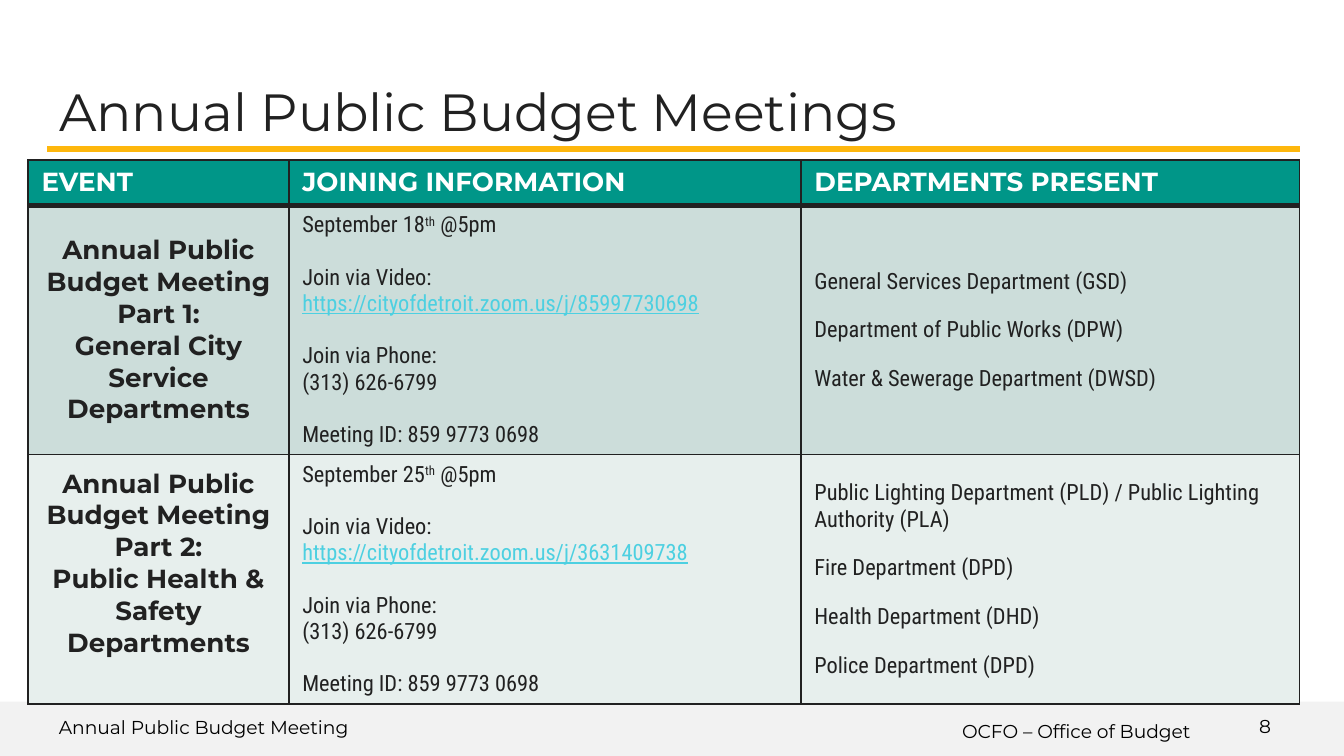
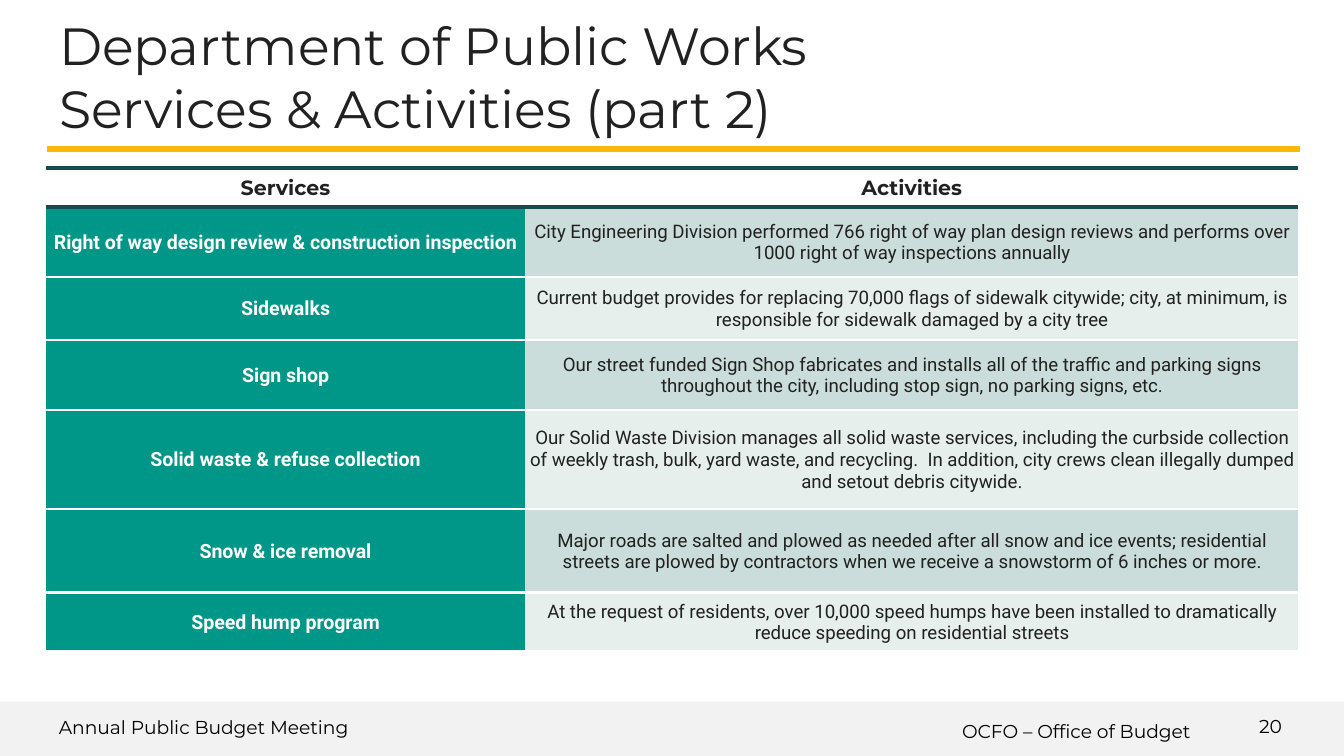
from copy import deepcopy
from dataclasses import dataclass

from lxml import etree
from pptx import Presentation
from pptx.dml.color import RGBColor
from pptx.enum.shapes import MSO_CONNECTOR, MSO_SHAPE
from pptx.enum.text import MSO_ANCHOR, MSO_AUTO_SIZE, PP_ALIGN
from pptx.oxml.ns import qn
from pptx.util import Inches, Pt

LEFT, CENTER = PP_ALIGN.LEFT, PP_ALIGN.CENTER
TOP, MIDDLE = MSO_ANCHOR.TOP, MSO_ANCHOR.MIDDLE
NO_FIT = MSO_AUTO_SIZE.NONE
STRAIGHT, RECTANGLE = MSO_CONNECTOR.STRAIGHT, MSO_SHAPE.RECTANGLE

# The page is a grid of 100 columns and 56.25 rows of square cells.
COLUMNS, ROWS, CELL = 100, 56.25, 0.1
TITLE_ONLY = 5

INK, BLACK, WHITE = "212121", "000000", "FFFFFF"
TEAL, DARK_TEAL, GOLD, BAND = "009688", "154C4D", "FEB70D", "F2F2F2"
LINK = "4DD0E1"
SAGE, SERVICE_SAGE, PALE = "CCDDDA", "CBDDDA", "E7EFED"
BLANK_LINE = 14


@dataclass(frozen=True)
class Style:
    size: float
    font: str = "Montserrat"
    color: str = INK
    bold: bool = False


@dataclass(frozen=True)
class Span:
    text: str
    raised: bool = False
    link: bool = False


@dataclass(frozen=True)
class Para:
    spans: tuple[Span, ...]
    before: float = 0
    after: float = 0


@dataclass(frozen=True)
class Place:
    left: float
    top: float
    width: float
    height: float


@dataclass(frozen=True)
class Edge:
    color: str
    width: float


@dataclass(frozen=True)
class CellLook:
    style: Style
    fill: str | None
    align: PP_ALIGN = LEFT
    anchor: MSO_ANCHOR = MIDDLE
    margins: tuple[float, ...] = (1, 0.5, 1, 0.5)


@dataclass(frozen=True)
class Meeting:
    event: tuple[str, ...]
    day: str
    link: str
    meeting_id: str
    departments: tuple[str, ...]
    fill: str
    event_bottom: float = 0.5


TITLE = Style(28)
FOOTER = Style(10, color=BLACK)
HEADING = Style(14, color=WHITE, bold=True)
EVENT = Style(14, bold=True)
DETAIL = Style(12, "Roboto Condensed")
SERVICE_HEADING = Style(11, bold=True)
SERVICE = Style(10.5, "Roboto", WHITE, True)
ACTIVITY = Style(10, "Roboto")

MEETINGS = (
    Meeting(
        ("Annual Public Budget Meeting", "Part 1:", "General City Service Departments"),
        "September 18",
        "https://cityofdetroit.zoom.us/j/85997730698",
        "859 9773 0698",
        (
            "General Services Department (GSD)",
            "Department of Public Works (DPW)",
            "Water & Sewerage Department (DWSD)",
        ),
        SAGE,
    ),
    Meeting(
        ("Annual Public Budget Meeting Part 2:", "Public Health & Safety Departments"),
        "September 25",
        "https://cityofdetroit.zoom.us/j/3631409738",
        "859 9773 0698",
        (
            "Public Lighting Department (PLD) / Public Lighting Authority (PLA)",
            "Fire Department (DPD)",
            "Health Department (DHD)",
            "Police Department (DPD)",
        ),
        PALE,
        event_bottom=2.9,
    ),
)

SERVICES = (
    ("Right of way design review & construction inspection",
     "City Engineering Division performed 766 right of way plan design reviews "
     "and performs over 1000 right of way inspections annually"),
    ("Sidewalks",
     "Current budget provides for replacing 70,000 flags of sidewalk citywide; "
     "city, at minimum, is responsible for sidewalk damaged by a city tree"),
    ("Sign shop",
     "Our street funded Sign Shop fabricates and installs all of the traffic and "
     "parking signs throughout the city, including stop sign, no parking signs, etc."),
    ("Solid waste & refuse collection",
     "Our Solid Waste Division manages all solid waste services, including the "
     "curbside collection of weekly trash, bulk, yard waste, and recycling.  In "
     "addition, city crews clean illegally dumped and setout debris citywide."),
    ("Snow & ice removal",
     "Major roads are salted and plowed as needed after all snow and ice events; "
     "residential streets are plowed by contractors when we receive a snowstorm "
     "of 6 inches or more."),
    ("Speed hump program",
     "At the request of residents, over 10,000 speed humps have been installed to "
     "dramatically reduce speeding on residential streets"),
)


def grid(cells: float) -> int:
    """Length of a number of grid cells."""
    return Inches(cells * CELL)


def box_of(place: Place) -> tuple[int, ...]:
    return tuple(map(grid, (place.left, place.top, place.width, place.height)))


def rgb(color: str) -> RGBColor:
    return RGBColor.from_string(color)


def format_run(run, style: Style) -> None:
    run.font.size = Pt(style.size)
    run.font.name = style.font
    run.font.bold = style.bold
    run.font.color.rgb = rgb(style.color)


def plain(text: str, before: float = 0, after: float = 0, link: bool = False) -> Para:
    return Para((Span(text, link=link),), before, after)


def write(frame, paras: list[Para], style: Style, align: PP_ALIGN = LEFT) -> None:
    for index, para in enumerate(paras):
        paragraph = frame.add_paragraph() if index else frame.paragraphs[0]
        paragraph.alignment = align
        paragraph.space_before, paragraph.space_after = Pt(para.before), Pt(para.after)
        for span in para.spans:
            run = paragraph.add_run()
            run.text = span.text
            format_run(run, style)
            if span.raised:
                run.font._rPr.set("baseline", "30000")
            if span.link:
                run.font.color.rgb = rgb(LINK)
                run.font.underline = True


def set_frame(frame, anchor: MSO_ANCHOR) -> None:
    frame.word_wrap = True
    frame.auto_size = NO_FIT
    frame.vertical_anchor = anchor
    frame.margin_left = frame.margin_right = grid(1)
    frame.margin_top = frame.margin_bottom = grid(1)


def add_label(page, text: str, place: Place, anchor: MSO_ANCHOR = TOP) -> None:
    box = page.shapes.add_textbox(*box_of(place))
    set_frame(box.text_frame, anchor)
    write(box.text_frame, [plain(text)], FOOTER)


def set_title(page, text: str, place: Place) -> None:
    title = page.shapes.title
    title.left, title.top, title.width, title.height = box_of(place)
    frame = title.text_frame
    set_frame(frame, TOP)
    frame.text = text
    paragraph = frame.paragraphs[0]
    paragraph.alignment = LEFT
    for run in paragraph.runs:
        format_run(run, TITLE)
    for line_break in paragraph._p.findall(qn("a:br")):
        line_break.append(deepcopy(paragraph.runs[0].font._rPr))


def add_page(deck, title: str, title_place: Place, number: int):
    """Add a page with its footer band, gold rule and title."""
    page = deck.slides.add_slide(deck.slide_layouts[TITLE_ONLY])
    band = page.shapes.add_shape(RECTANGLE, *box_of(Place(0, 52.2, COLUMNS, ROWS - 52.2)))
    band.shadow.inherit = False
    band.fill.solid()
    band.fill.fore_color.rgb = rgb(BAND)
    band.line.fill.background()
    add_label(page, "OCFO – Office of Budget", Place(70.6, 52.6, 29.4, 3.6))
    add_label(page, "Annual Public Budget Meeting", Place(3.4, 52.3, 40, 2.7))
    rule = page.shapes.add_connector(STRAIGHT, *map(grid, (3.5, 11.1, 96.7, 11.1)))
    rule.line.color.rgb = rgb(GOLD)
    rule.line.width = Pt(3)
    etree.SubElement(rule._element.spPr, qn("a:effectLst"))
    set_title(page, title, title_place)
    add_label(page, str(number), Place(92.7, 51.9, 6, 4.3), MIDDLE)
    return page


def add_grid_table(page, left: float, top: float, widths: tuple, heights: tuple):
    place = Place(left, top, sum(widths), sum(heights))
    table = page.shapes.add_table(len(heights), len(widths), *box_of(place)).table
    table.horz_banding = False
    for column, width in zip(table.columns, widths):
        column.width = grid(width)
    for row, height in zip(table.rows, heights):
        row.height = grid(height)
    return table


def set_edges(cell, side: Edge | None, top: Edge, bottom: Edge) -> None:
    properties = cell._tc.get_or_add_tcPr()
    for tag, edge in (("lnL", side), ("lnR", side), ("lnT", top), ("lnB", bottom)):
        line = etree.SubElement(properties, qn(f"a:{tag}"))
        if edge is None:
            line.set("w", "0")
            etree.SubElement(line, qn("a:noFill"))
        else:
            line.set("w", str(int(Pt(edge.width))))
            fill = etree.SubElement(line, qn("a:solidFill"))
            etree.SubElement(fill, qn("a:srgbClr")).set("val", edge.color)


def fill_cell(cell, paras: list[Para], look: CellLook) -> None:
    if look.fill:
        cell.fill.solid()
        cell.fill.fore_color.rgb = rgb(look.fill)
    else:
        cell.fill.background()
    cell.vertical_anchor = look.anchor
    (cell.margin_left, cell.margin_top,
     cell.margin_right, cell.margin_bottom) = map(grid, look.margins)
    write(cell.text_frame, paras, look.style, look.align)


def joining_paras(meeting: Meeting) -> list[Para]:
    return [
        Para((Span(meeting.day), Span("th", raised=True), Span(" @5pm"))),
        plain("Join via Video:", BLANK_LINE),
        plain(meeting.link, link=True),
        plain("Join via Phone:", BLANK_LINE),
        plain("(313) 626-6799"),
        plain(f"Meeting ID: {meeting.meeting_id}", BLANK_LINE),
    ]


def add_meetings(page) -> None:
    table = add_grid_table(page, 2.1, 11.9, (19.4, 38.1, 37.1), (3.2, 18.5, 18.5))
    thin, thick = Edge(INK, 1), Edge(INK, 3)
    edges = (thin, thick, thin, thin)
    for row, (top, bottom) in enumerate(zip(edges, edges[1:])):
        for cell in table.rows[row].cells:
            set_edges(cell, thin, top, bottom)
    headings = ("EVENT", "JOINING INFORMATION", "DEPARTMENTS PRESENT")
    for cell, heading in zip(table.rows[0].cells, headings):
        fill_cell(cell, [plain(heading)], CellLook(HEADING, TEAL, anchor=TOP))
    for row, meeting in enumerate(MEETINGS, start=1):
        event, joining, departments = table.rows[row].cells
        fill_cell(event, [plain(line) for line in meeting.event],
                  CellLook(EVENT, meeting.fill, CENTER,
                           margins=(1, 0.5, 1, meeting.event_bottom)))
        fill_cell(joining, joining_paras(meeting), CellLook(DETAIL, meeting.fill, anchor=TOP))
        fill_cell(departments, [plain(name, after=12) for name in meeting.departments],
                  CellLook(DETAIL, meeting.fill))


def add_services(page) -> None:
    heights = (2.9, 5.2, 4.7, 5.2, 7.4, 6.2, 4.4)
    table = add_grid_table(page, 3.4, 12.5, (35.7, 57.5), heights)
    dark, white = Edge(DARK_TEAL, 2.25), Edge(WHITE, 1.5)
    edges = (dark, dark) + (white,) * len(SERVICES)
    tight = (0.1, 0.1, 0.1, 0)
    for row, texts in enumerate((("Services", "Activities"), *SERVICES)):
        stripe = SERVICE_SAGE if row % 2 else PALE
        looks = ((SERVICE, TEAL), (ACTIVITY, stripe)) if row else ((SERVICE_HEADING, None),) * 2
        for cell, text, (style, fill) in zip(table.rows[row].cells, texts, looks):
            set_edges(cell, None, edges[row], edges[row + 1])
            fill_cell(cell, [plain(text)], CellLook(style, fill, CENTER, margins=tight))


def main() -> None:
    deck = Presentation()
    deck.slide_width, deck.slide_height = grid(COLUMNS), grid(ROWS)
    add_meetings(add_page(deck, "Annual Public Budget Meetings", Place(3.4, 4.9, 93.2, 6.3), 8))
    add_services(add_page(deck, "Department of Public Works\vServices & Activities (part 2)",
                          Place(3.4, 0, 93.2, 11.1), 20))
    deck.save("out.pptx")


if __name__ == "__main__":
    main()
